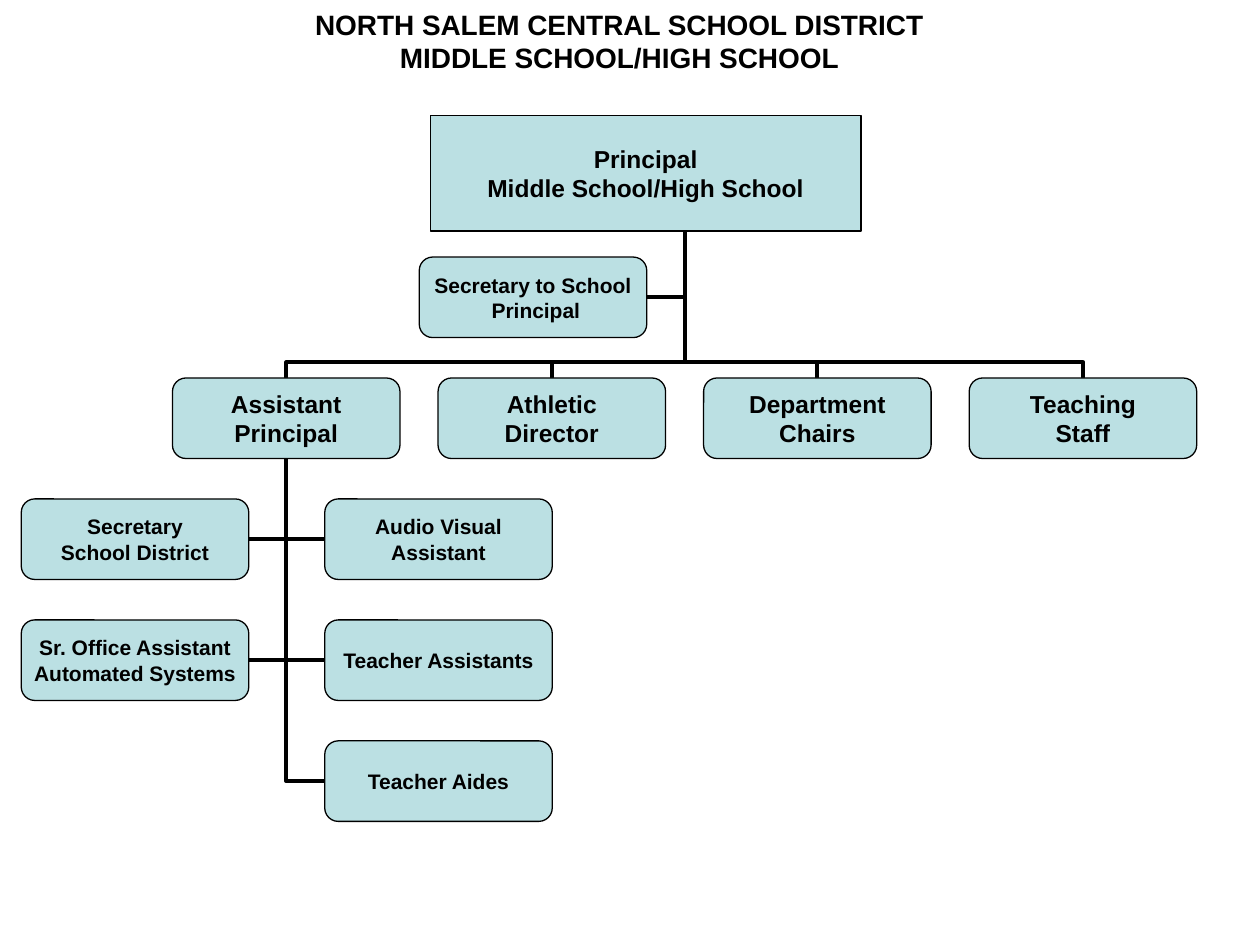
"""Build the organisation chart of a middle and high school."""
from dataclasses import dataclass

from lxml.etree import SubElement
from pptx import Presentation
from pptx.dml.color import RGBColor
from pptx.enum.shapes import MSO_CONNECTOR, MSO_SHAPE
from pptx.enum.text import MSO_ANCHOR, PP_ALIGN
from pptx.oxml.ns import qn
from pptx.shapes.connector import Connector
from pptx.slide import Slide
from pptx.text.text import TextFrame
from pptx.util import Pt

COLORS = {"box": "BBE0E3", "ink": "000000"}
BOX_WIDTH, BOX_HEIGHT = 130, 46
ROW_STEP, COLUMN_STEP = 69.12, 151.75
STAFF_LEFT, STAFF_TOP = 98.6, 216
SIDE_LEFT, SIDE_RIGHT = 12.2, 185.6
PRINCIPAL_JOINT = (391.7, 123.8)
ASSISTANT_JOINT = (STAFF_LEFT + BOX_WIDTH / 2, STAFF_TOP + BOX_HEIGHT)


@dataclass
class Box:
    lines: list[str]
    left: float
    top: float
    size: float = 12
    width: float = BOX_WIDTH
    height: float = BOX_HEIGHT
    preset: MSO_SHAPE = MSO_SHAPE.ROUNDED_RECTANGLE
    wrap: bool = False


def color(name: str) -> RGBColor:
    return RGBColor.from_string(COLORS[name])


def format_text(frame: TextFrame, size: float, layout: dict) -> None:
    for name, value in layout.items():
        setattr(frame, name, value)
    font_format = {"name": "Arial", "size": Pt(size), "bold": True}
    for paragraph in frame.paragraphs:
        paragraph.alignment = PP_ALIGN.CENTER
        for run in paragraph.runs:
            for name, value in font_format.items():
                setattr(run.font, name, value)
            run.font.color.rgb = color("ink")


def add_box(slide: Slide, box: Box) -> None:
    shape = slide.shapes.add_shape(
        box.preset, Pt(box.left), Pt(box.top), Pt(box.width), Pt(box.height))
    shape.shadow.inherit = False
    shape.fill.solid()
    shape.fill.fore_color.rgb = color("box")
    shape.line.color.rgb = color("ink")
    shape.line.width = Pt(0.75)
    shape.text_frame.text = "\n".join(box.lines)
    layout = {"word_wrap": box.wrap, "vertical_anchor": MSO_ANCHOR.MIDDLE}
    layout |= {f"margin_{side}": 0 for side in ("left", "top", "right", "bottom")}
    format_text(shape.text_frame, box.size, layout)


def add_elbow(slide: Slide, start: tuple[float, float], end: tuple[float, float]) -> Connector:
    connector = slide.shapes.add_connector(
        MSO_CONNECTOR.ELBOW, *(Pt(value) for value in start + end))
    connector.line.color.rgb = color("ink")
    connector.line.width = Pt(2.25)
    SubElement(connector._element.spPr, qn("a:effectLst"))
    return connector


def add_rise(slide: Slide, start: tuple[float, float], end: tuple[float, float],
             bend: int) -> None:
    """Draw an elbow that leaves its start upwards and bends at a share of 100000."""
    center_x, center_y = (start[0] + end[0]) / 2, (start[1] + end[1]) / 2
    half_rise, half_run = (start[1] - end[1]) / 2, abs(end[0] - start[0]) / 2
    turn = 270 if start[0] < end[0] else 90
    direction = 1 if turn == 270 else -1
    connector = add_elbow(
        slide, (center_x - direction * half_rise, center_y - half_run),
        (center_x + direction * half_rise, center_y + half_run))
    properties = connector._element.spPr
    properties.find(qn("a:xfrm")).set("rot", str(turn * 60000))
    geometry = properties.find(qn("a:prstGeom"))
    guides = geometry.find(qn("a:avLst"))
    SubElement(guides, qn("a:gd"), name="adj1", fmla=f"val {bend}")


def add_branch(slide: Slide, box: Box, joint: tuple[float, float]) -> None:
    is_left = box.left + box.width < joint[0]
    edge = box.left + box.width if is_left else box.left
    connector = add_elbow(slide, (edge, box.top + box.height / 2), joint)
    connector._element.spPr.find(qn("a:prstGeom")).set("prst", "bentConnector2")
    add_box(slide, box)


def add_title(slide: Slide) -> None:
    title = slide.shapes.title
    place = {"left": Pt(0), "top": Pt(12.2), "width": Pt(708), "height": Pt(42)}
    for name, value in place.items():
        setattr(title, name, value)
    title.text_frame.text = "NORTH SALEM CENTRAL SCHOOL DISTRICT\vMIDDLE SCHOOL/HIGH SCHOOL"
    format_text(title.text_frame, 16, {
        "word_wrap": True, "vertical_anchor": MSO_ANCHOR.MIDDLE,
        "margin_top": 0, "margin_bottom": Pt(19.6)})


def main() -> None:
    presentation = Presentation()
    presentation.slide_width, presentation.slide_height = Pt(720), Pt(540)
    slide = presentation.slides.add_slide(presentation.slide_layouts[5])
    add_title(slide)

    team = [
        (3, SIDE_RIGHT, ["Teacher Aides"]),
        (2, SIDE_RIGHT, ["Teacher Assistants"]),
        (2, SIDE_LEFT, ["Sr. Office Assistant", "Automated Systems"]),
        (1, SIDE_RIGHT, ["Audio Visual", "Assistant"]),
        (1, SIDE_LEFT, ["Secretary", "School District"]),
    ]
    for row, left, lines in team:
        add_branch(slide, Box(lines, left, STAFF_TOP + row * ROW_STEP), ASSISTANT_JOINT)
    add_rise(slide, (ASSISTANT_JOINT[0], 437.8), ASSISTANT_JOINT, 50000)

    secretary = Box(["Secretary to School", " Principal"], 239.6,
                    STAFF_TOP - ROW_STEP, wrap=True)
    add_branch(slide, secretary, PRINCIPAL_JOINT)

    staff = [["Assistant Principal"], ["Athletic", "Director"],
             ["Department", "Chairs"], ["Teaching", "Staff"]]
    for column, lines in enumerate(staff):
        left = STAFF_LEFT + column * COLUMN_STEP
        add_rise(slide, (left + BOX_WIDTH / 2, STAFF_TOP), PRINCIPAL_JOINT, 9800)
        add_box(slide, Box(lines, left, STAFF_TOP, 14, wrap=True))

    add_box(slide, Box(["Principal", "Middle School/High School"], 246, 66, 14,
                       246, 66, MSO_SHAPE.RECTANGLE))
    presentation.save("out.pptx")


if __name__ == "__main__":
    main()
